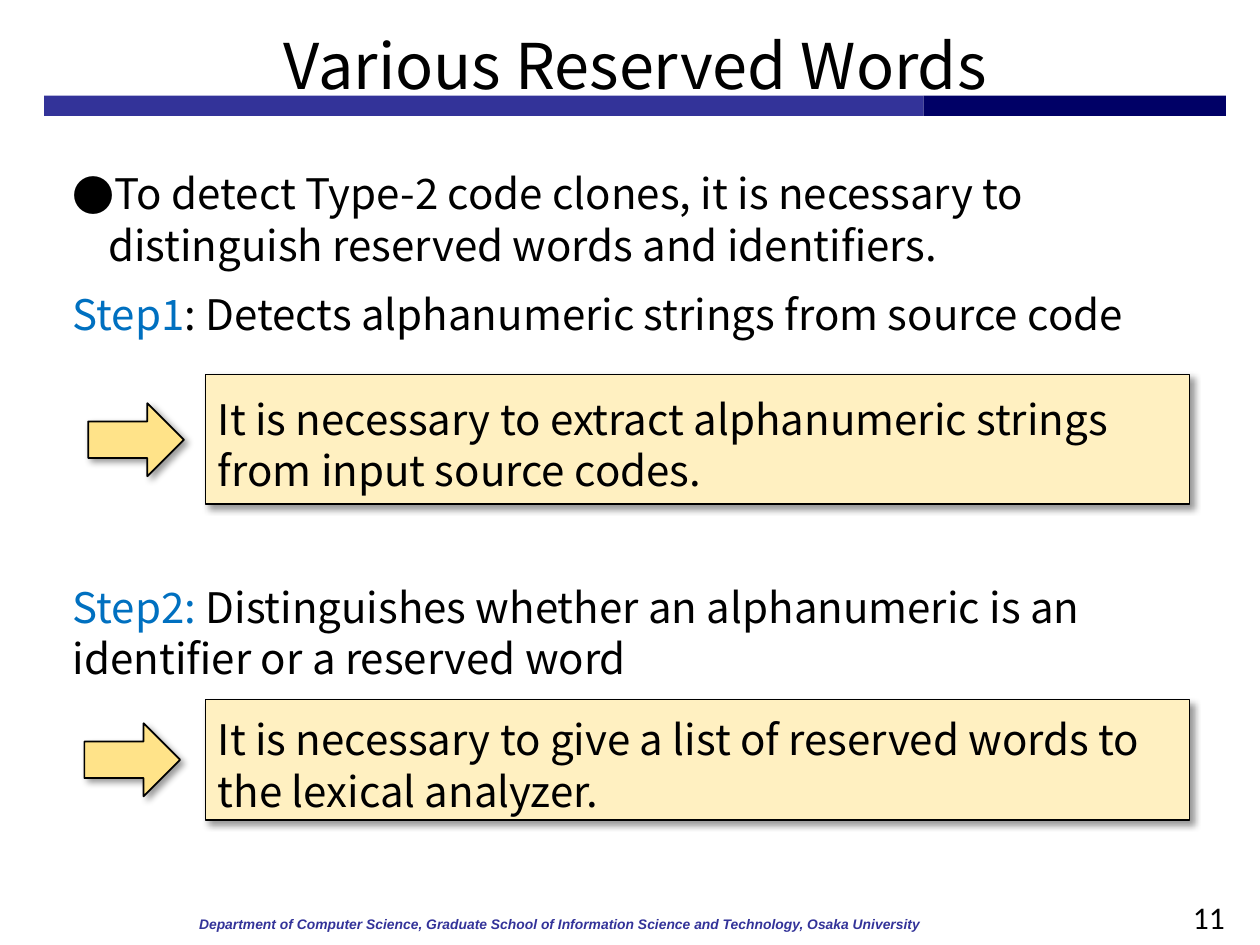
from lxml import etree
from pptx import Presentation
from pptx.dml import color
from pptx.enum import shapes, text
from pptx.oxml import ns
from pptx.util import Inches, Pt

COLS, ROWS = 100, 75
SANS = "Noto Sans CJK JP"
BLACK, NAVY, BLUE = "000000", "333399", "0070C0"
MID = text.MSO_ANCHOR.MIDDLE


def rgb(code):
    return color.RGBColor.from_string(code)


def node(parent, tag, **attrs):
    return etree.SubElement(parent, ns.qn(tag), attrs)


def write(shape, *runs, size=24, face=SANS, bold=False, italic=False,
          align=text.PP_ALIGN.LEFT, anchor=text.MSO_ANCHOR.TOP,
          inset=(1, 0.85, 1, 0.5), pitch=None, after=0, bullet=None):
    frame = shape.text_frame
    frame.word_wrap = True
    frame.vertical_anchor = anchor
    sides = ("left", "top", "right", "bottom")
    for side, gap in zip(sides, inset):
        setattr(frame, f"margin_{side}", Inches(gap / 10))
    para = frame.paragraphs[0]
    para.alignment = align
    para.space_after = Pt(after)
    if pitch:
        para.line_spacing = Pt(size * pitch)
    if bullet:
        props = para._p.get_or_add_pPr()
        hang = Inches(0.28)
        props.set("marL", str(hang))
        props.set("indent", str(-hang))
        node(props, "a:buFont", typeface=SANS)
        node(props, "a:buChar", char=bullet)
    for words, tint in runs:
        run = para.add_run()
        run.text = words
        font = run.font
        font.size, font.name = Pt(size), face
        font.bold, font.italic = bold, italic
        font.color.rgb = rgb(tint)
        node(run._r.get_or_add_rPr(), "a:ea", typeface=face)


class Deck:
    pitch = 1.22

    def __init__(self):
        self.prs = Presentation()
        self.prs.slide_width, self.prs.slide_height = Inches(10), Inches(7.5)
        self.slide = self.prs.slides.add_slide(self.prs.slide_layouts[6])

    def place(self, col, row, wide, high):
        width, height = self.prs.slide_width, self.prs.slide_height
        return (int(width * col / COLS), int(height * row / ROWS),
                int(width * wide / COLS), int(height * high / ROWS))

    def block(self, kind, area, fill, line=None):
        shape = self.slide.shapes.add_shape(kind, *self.place(*area))
        shape.shadow.inherit = False
        shape.fill.solid()
        shape.fill.fore_color.rgb = rgb(fill)
        if line:
            shape.line.color.rgb = rgb(BLACK)
            shape.line.width = Pt(line)
        else:
            shape.line.fill.background()
        return shape

    def bar(self, col, wide, fill):
        self.block(shapes.MSO_SHAPE.RECTANGLE, (col, 7.6, wide, 1.6), fill)

    def cast(self, shape):
        effect = shape._element.spPr.find(ns.qn("a:effectLst"))
        shade = node(effect, "a:outerShdw", blurRad=str(Pt(4)),
                     dist=str(Pt(3)), dir=str(45 * 60000),
                     algn="tl", rotWithShape="0")
        tint = node(shade, "a:srgbClr", val=BLACK)
        node(tint, "a:alpha", val="40000")

    def arrow(self, col, row):
        shape = self.block(shapes.MSO_SHAPE.RIGHT_ARROW,
                           (col, row, 7.6, 5.8), "FFE389", 1)
        self.cast(shape)

    def note(self, row, high, words):
        shape = self.block(shapes.MSO_SHAPE.RECTANGLE,
                           (16.3, row, 78.1, high), "FFF0C1", 0.75)
        self.cast(shape)
        write(shape, (words, BLACK), anchor=MID, pitch=self.pitch,
              inset=(1, 1.2, 1, 0.5))

    def label(self, area, *runs, **style):
        box = self.slide.shapes.add_textbox(*self.place(*area))
        write(box, *runs, **style)

    def body(self, row, high, *runs, **style):
        self.label((4.8, row, 91.2, high), *runs, pitch=self.pitch,
                   after=6, **style)


def main():
    deck = Deck()
    deck.bar(3.5, 69.8, NAVY)
    deck.bar(73.3, 24, "000066")
    deck.label((15.1, 72.3, 75.2, 2.4),
               ("Department of Computer Science, Graduate School of Information "
                "Science and Technology, Osaka University", NAVY),
               size=7.9, face="Arial", bold=True, italic=True,
               inset=(0.7, 0.4, 0.7, 0.4))
    deck.label((3.5, 1.3, 93.8, 6.3), ("Various Reserved Words", BLACK),
               size=36, align=text.PP_ALIGN.CENTER, anchor=MID,
               pitch=deck.pitch, inset=(1, 1.2, 1, 0))
    deck.label((91.9, 70.8, 6.3, 2.9), ("11", BLACK), size=18,
               face="Calibri", align=text.PP_ALIGN.RIGHT,
               inset=(1, 0.5, 1, 0.5))
    deck.body(12.4, 8.4,
              ("To detect Type-2 code clones, it is necessary to distinguish "
               "reserved words and identifiers.", BLACK), bullet="●")
    deck.body(22, 4.7, ("Step1", BLUE),
              (": Detects alphanumeric strings from source code", BLACK))
    deck.body(45.2, 8.3, ("Step2: ", BLUE),
              ("Distinguishes whether an alphanumeric is an identifier "
               "or a reserved word", BLACK))
    deck.note(29.7, 10.3, "It is necessary to extract alphanumeric strings "
              "from input source codes.")
    deck.note(55.5, 9.6, "It is necessary to give a list of reserved words "
              "to the lexical analyzer.")
    deck.arrow(7, 32)
    deck.arrow(6.7, 57.4)
    deck.prs.save("out.pptx")


if __name__ == "__main__":
    main()
